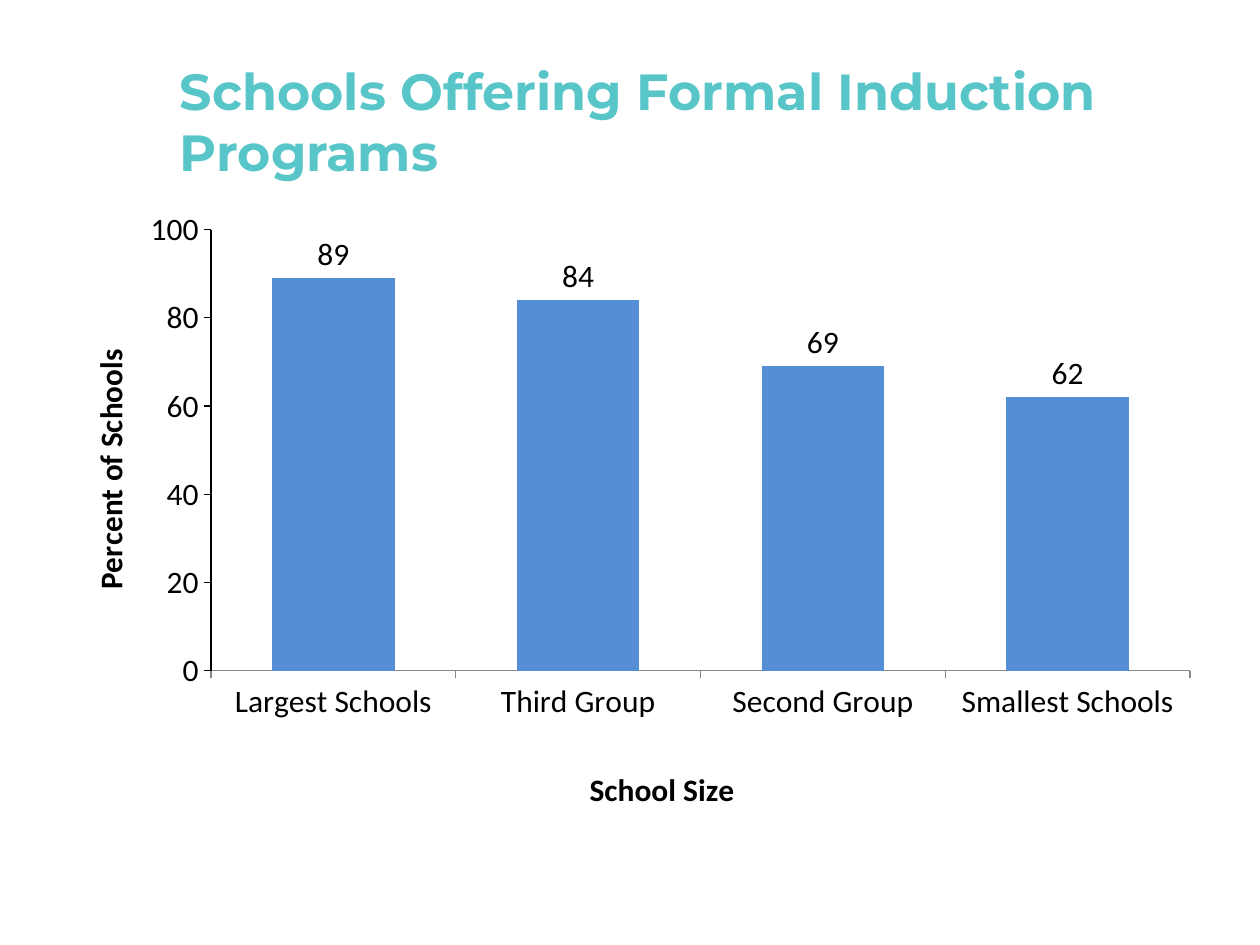
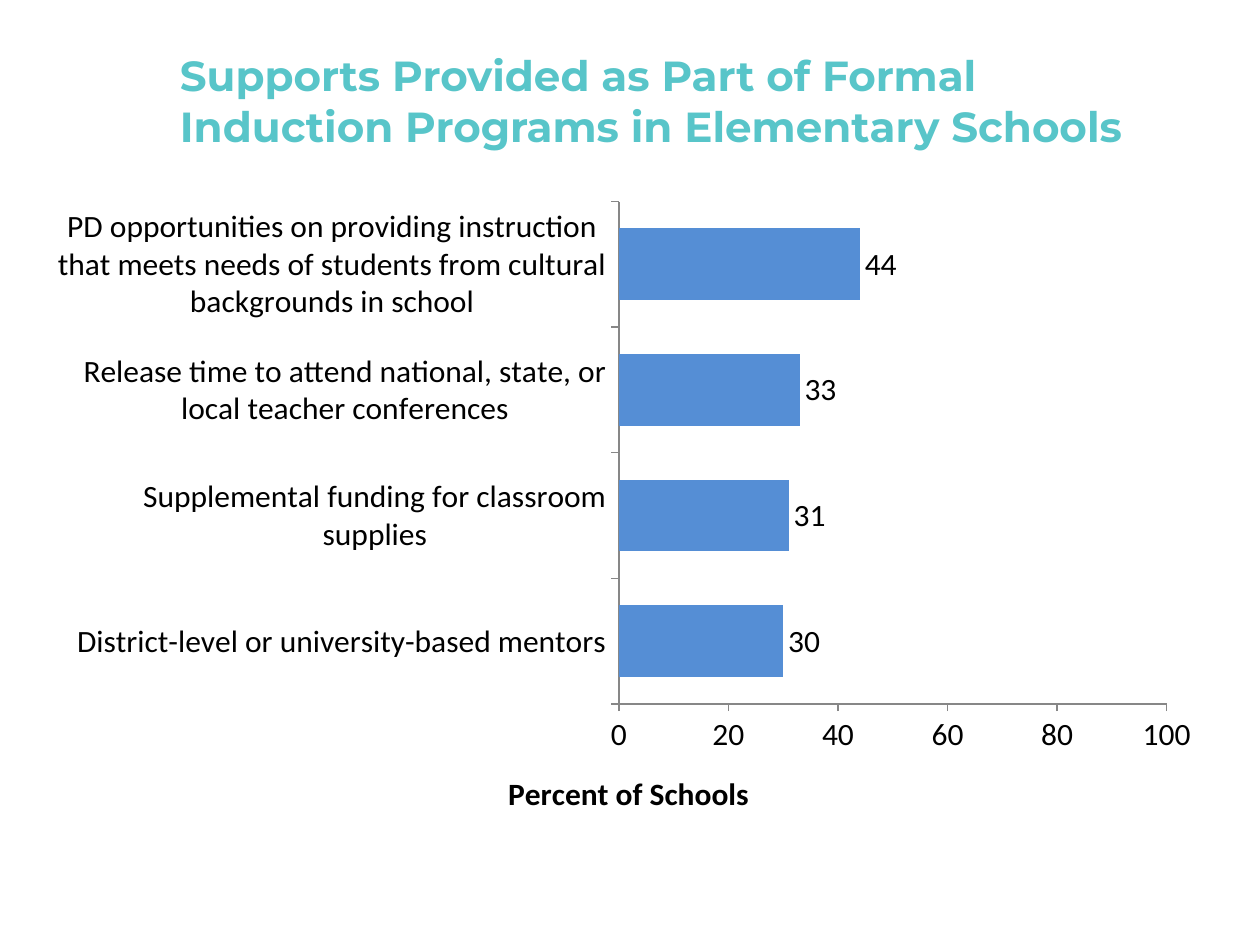
import pptx
import pptx.chart.data
import pptx.dml.color
import pptx.enum.chart
import pptx.enum.text
import pptx.oxml
import pptx.oxml.ns
import pptx.util
from pptx.util import Inches

COLORS = {"title": "58C5C9", "bar": "558ED5", "text": "000000", "axis": "878787"}
ChartType = pptx.enum.chart.XL_CHART_TYPE


def rgb(name):
    """Return the named palette colour."""
    return pptx.dml.color.RGBColor.from_string(COLORS[name])


def place(parent, inner=False, **fractions):
    """Give a chart part a manual layout in fractions of the chart."""
    qn = pptx.oxml.ns.qn
    for old in parent.findall(qn("c:layout")):
        parent.remove(old)
    target = '<c:layoutTarget val="inner"/>' if inner else ""
    modes = "".join(f'<c:{key}Mode val="edge"/>' for key in ("x", "y"))
    values = "".join(f'<c:{key} val="{val}"/>' for key, val in fractions.items())
    layout = pptx.oxml.parse_xml(
        f'<c:layout {pptx.oxml.ns.nsdecls("c")}><c:manualLayout>'
        f"{target}{modes}{values}</c:manualLayout></c:layout>"
    )
    parent.insert(0 if parent.find(qn("c:tx")) is None else 1, layout)


class Deck:
    """Hold the shared style and the current slide."""

    def __init__(self):
        self.prs = pptx.Presentation()
        self.prs.slide_width, self.prs.slide_height = Inches(10), Inches(7.5)
        self.s = None

    def slide(self):
        """Start a blank slide."""
        self.s = self.prs.slides.add_slide(self.prs.slide_layouts[6])

    def title(self, text, top, size):
        """Add the slide title."""
        sp = self.s.shapes.add_textbox(Inches(1.33), Inches(top), Inches(8.17), Inches(1.25))
        tf = sp.text_frame
        tf.word_wrap = True
        tf.vertical_anchor = pptx.enum.text.MSO_ANCHOR.MIDDLE
        p = tf.paragraphs[0]
        p.text = text
        self.font(p.font, size, "title", "Montserrat", True)

    def font(self, font, size=18, color="text", name="Calibri", bold=False):
        """Style a font."""
        font.name, font.size, font.bold = name, pptx.util.Pt(size), bold
        font.color.rgb = rgb(color)

    def chart(self, kind, top, height, values, gap, plot):
        """Add a single-series bar chart with value labels."""
        data = pptx.chart.data.CategoryChartData()
        data.categories = list(values)
        data.add_series("Series 1", values.values())
        chart = self.s.shapes.add_chart(
            kind, Inches(0.38), Inches(top), Inches(9.25), Inches(height), data
        ).chart
        self.font(chart.font)
        chart.has_title = chart.has_legend = False
        place(chart.element.chart.plotArea, True, **dict(zip("xywh", plot)))
        bars = chart.plots[0]
        bars.gap_width, bars.vary_by_categories = gap, False
        bars.series[0].format.fill.solid()
        bars.series[0].format.fill.fore_color.rgb = rgb("bar")
        bars.has_data_labels = True
        labels = bars.data_labels
        labels.show_value = True
        labels.position = pptx.enum.chart.XL_LABEL_POSITION.OUTSIDE_END
        self.font(labels.font)
        axis = chart.value_axis
        axis.minimum_scale, axis.maximum_scale, axis.major_unit = 0, 100, 20
        for axis in (chart.category_axis, chart.value_axis):
            axis.has_major_gridlines = False
            axis.major_tick_mark = pptx.enum.chart.XL_TICK_MARK.OUTSIDE
            self.axis_line(axis, "axis")
            self.font(axis.tick_labels.font)
        return chart

    def axis_line(self, axis, color):
        """Colour an axis line."""
        axis.format.line.color.rgb = rgb(color)
        axis.format.line.width = pptx.util.Pt(0.75)

    def axis_title(self, axis, text, x, y):
        """Add a bold axis title at a fraction of the chart."""
        p = axis.axis_title.text_frame.paragraphs[0]
        p.text = text
        self.font(p.font, bold=True)
        place(axis.axis_title.element, x=x, y=y)


def main():
    """Build both slides."""
    deck = Deck()

    deck.slide()
    sizes = {"Largest Schools": 89, "Third Group": 84, "Second Group": 69, "Smallest Schools": 62}
    chart = deck.chart(
        ChartType.COLUMN_CLUSTERED, 1.58, 4.92, sizes, 100, (0.14, 0.05, 0.84, 0.72)
    )
    deck.axis_line(chart.value_axis, "text")
    deck.axis_title(chart.category_axis, "School Size", 0.46, 0.92)
    deck.axis_title(chart.value_axis, "Percent of Schools", 0.03, 0.24)
    deck.title("Schools Offering Formal Induction Programs", 0.33, 29)

    deck.slide()
    supports = {
        "District-level or university-based mentors": 30,
        "Supplemental funding for classroom supplies": 31,
        "Release time to attend national, state, or local teacher conferences": 33,
        "PD opportunities on providing instruction that meets needs of students "
        "from cultural backgrounds in school": 44,
    }
    chart = deck.chart(
        ChartType.BAR_CLUSTERED, 1.45, 5.08, supports, 75, (0.49, 0.03, 0.47, 0.8)
    )
    deck.axis_title(chart.value_axis, "Percent of Schools", 0.39, 0.93)
    deck.title(
        "Supports Provided as Part of Formal Induction Programs in Elementary Schools", 0.17, 24
    )

    deck.prs.save("out.pptx")


if __name__ == "__main__":
    main()
